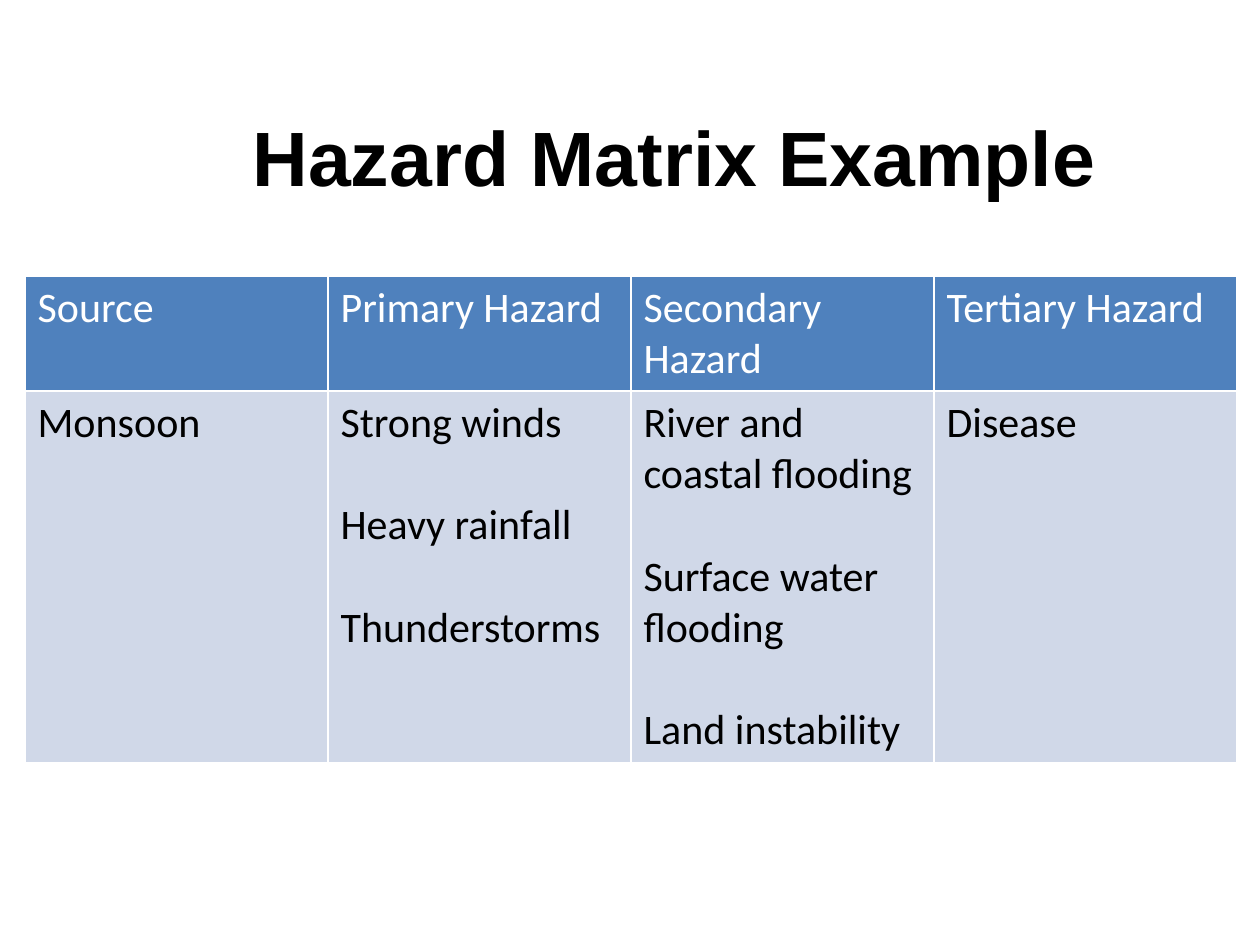
from lxml import etree
from pptx import Presentation
from pptx.dml.color import RGBColor
from pptx.enum.text import MSO_ANCHOR, PP_ALIGN
from pptx.oxml.ns import qn
from pptx.util import Inches, Pt

PX_PER_INCH = 126
HAZARD_COLUMNS = [
    ("Source", ["Monsoon"]),
    ("Primary Hazard", ["Strong winds", "Heavy rainfall", "Thunderstorms"]),
    ("Secondary Hazard", ["River and coastal flooding",
                          "Surface water flooding", "Land instability"]),
    ("Tertiary Hazard", ["Disease"]),
]
HEADER_STYLE = {"fill": "4F81BD", "text": "FFFFFF"}
BODY_STYLE = {"fill": "D0D8E8", "text": "000000"}


def px(length):
    return Inches(length / PX_PER_INCH)


def color(hex_value):
    return RGBColor.from_string(hex_value)


def format_font(font, hex_value, **values):
    for name, value in values.items():
        setattr(font, name, value)
    font.color.rgb = color(hex_value)


def add_borders(cell, hex_value, width):
    properties = cell._tc.get_or_add_tcPr()
    for side in ("a:lnL", "a:lnR", "a:lnT", "a:lnB"):
        line = etree.SubElement(properties, qn(side), w=str(Pt(width)))
        fill = etree.SubElement(line, qn("a:solidFill"))
        etree.SubElement(fill, qn("a:srgbClr"), val=hex_value)


def place_title(slide, left, top, width, height):
    title = slide.shapes.title
    box = {"left": left, "top": top, "width": width, "height": height}
    for name, value in box.items():
        setattr(title, name, px(value))
    frame = title.text_frame
    frame.text = "Hazard Matrix Example"
    frame.vertical_anchor = MSO_ANCHOR.BOTTOM
    heading = frame.paragraphs[0]
    heading.alignment = PP_ALIGN.CENTER
    format_font(heading.runs[0].font, "000000",
                name="Arial", size=Pt(44), bold=True)


def fill_cell(cell, entries, style):
    add_borders(cell, "FFFFFF", 1)
    cell.fill.solid()
    cell.fill.fore_color.rgb = color(style["fill"])
    cell.text = "\n".join(entries)
    for index, paragraph in enumerate(cell.text_frame.paragraphs):
        if index:
            paragraph.space_before = Pt(29.3)  # one line between hazards
        format_font(paragraph.runs[0].font, style["text"],
                    name="Calibri", size=Pt(24), bold=False)


def place_matrix(slide, left, top, width, header_height, body_height):
    matrix = slide.shapes.add_table(
        2, len(HAZARD_COLUMNS), px(left), px(top), px(width),
        px(header_height + body_height)).table
    matrix.horz_banding = False
    for row, height in zip(matrix.rows, (header_height, body_height)):
        row.height = px(height)
    for index, (heading, hazards) in enumerate(HAZARD_COLUMNS):
        matrix.columns[index].width = px(width / len(HAZARD_COLUMNS))
        fill_cell(matrix.cell(0, index), [heading], HEADER_STYLE)
        fill_cell(matrix.cell(1, index), hazards, BODY_STYLE)


def main():
    presentation = Presentation()
    presentation.slide_width = px(1260)
    presentation.slide_height = px(945)
    # Title-only layout
    slide = presentation.slides.add_slide(presentation.slide_layouts[5])
    place_title(slide, 93, 79, 1163, 129)
    place_matrix(slide, 25, 276, 1212, 115, 371)
    presentation.save("out.pptx")


if __name__ == "__main__":
    main()
